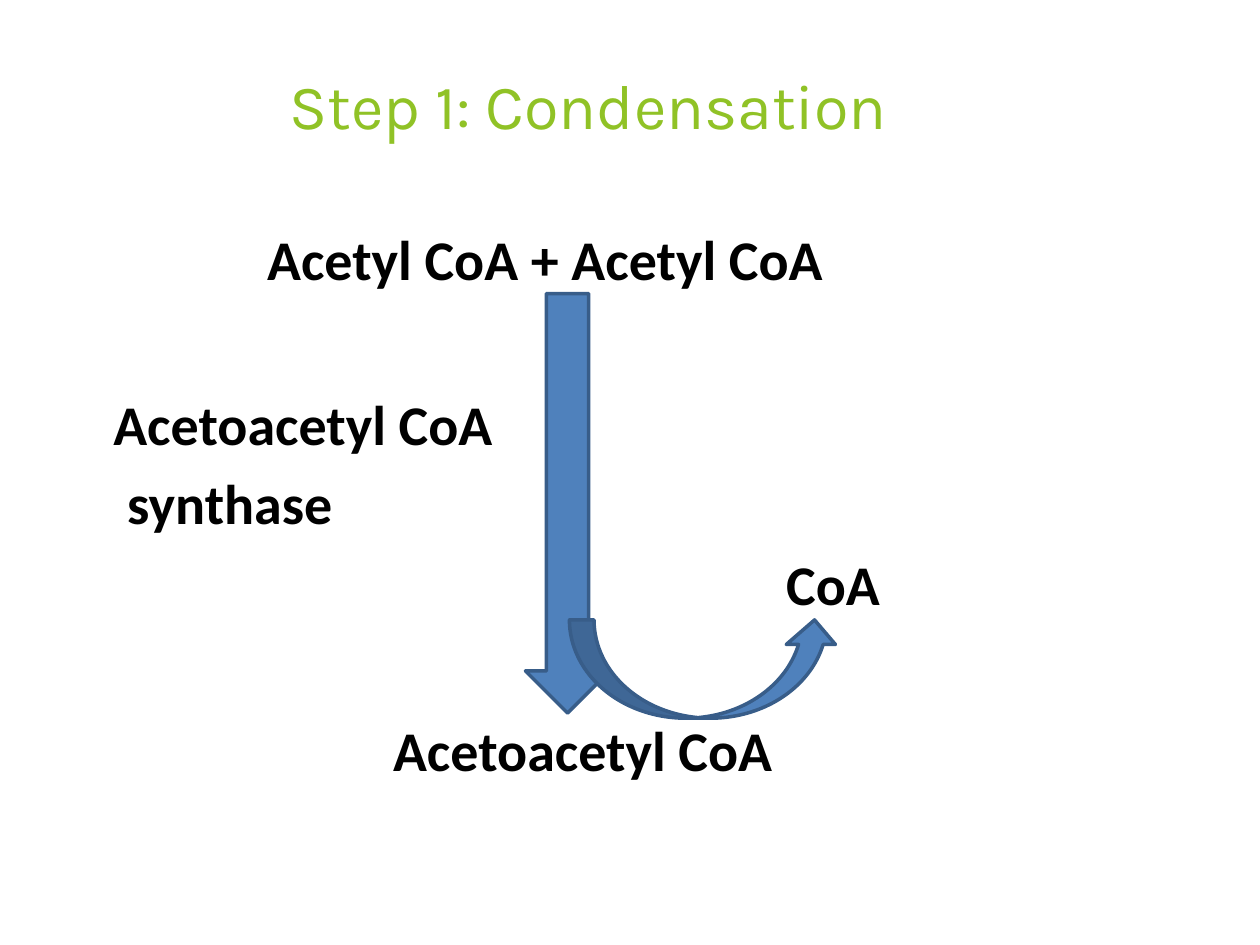
from dataclasses import dataclass

import pptx
import pptx.dml.color
import pptx.enum.shapes
import pptx.enum.text
import pptx.util

Inches = pptx.util.Inches
Pt = pptx.util.Pt
Shape = pptx.enum.shapes.MSO_SHAPE


def color(code):
    return pptx.dml.color.RGBColor.from_string(code)


@dataclass(frozen=True)
class Theme:
    head: str = "90C226"
    ink: str = "000000"
    fill: str = "4F81BC"
    edge: str = "385D89"
    head_font: str = "Karla"
    body_font: str = "Calibri"
    head_size: int = 36
    body_size: int = 32
    line: int = 2


THEME = Theme()


def text(frame, lines, *, font=THEME.body_font, size=THEME.body_size,
         ink=THEME.ink, bold=True, gap=0, indent=0):
    """Fill the frame; gap and indent apply to each line after the first."""
    frame.word_wrap = True
    frame.auto_size = pptx.enum.text.MSO_AUTO_SIZE.NONE
    frame.vertical_anchor = pptx.enum.text.MSO_ANCHOR.TOP
    frame.margin_left = frame.margin_right = 0
    frame.margin_top = frame.margin_bottom = 0
    for i, line in enumerate(lines):
        para = frame.add_paragraph() if i else frame.paragraphs[0]
        para.alignment = pptx.enum.text.PP_ALIGN.LEFT
        para.space_before = Pt(gap if i else 0)
        if i and indent:
            para._p.get_or_add_pPr().set("marL", str(Inches(indent)))
        run = para.add_run()
        run.text = line
        run.font.name = font
        run.font.size = Pt(size)
        run.font.bold = bold
        run.font.color.rgb = color(ink)


def place(box):
    return [Inches(n) for n in box]


def title(slide, box, words):
    shape = slide.shapes.title
    shape.left, shape.top, shape.width, shape.height = place(box)
    text(shape.text_frame, [words], font=THEME.head_font,
         size=THEME.head_size, ink=THEME.head, bold=False)


def label(slide, box, *lines, **form):
    text(slide.shapes.add_textbox(*place(box)).text_frame, lines, **form)


def arrow(slide, kind, box):
    shape = slide.shapes.add_shape(kind, *place(box))
    shape.shadow.inherit = False
    shape.fill.solid()
    shape.fill.fore_color.rgb = color(THEME.fill)
    shape.line.color.rgb = color(THEME.edge)
    shape.line.width = Pt(THEME.line)


def step(slide, box):
    """Draw the reaction: substrates, enzyme, released CoA and product."""
    x, y, width, height = box
    row = 0.55
    label(slide, (x + 1.22, y, width - 1.22, row), "Acetyl CoA + Acetyl CoA")
    label(slide, (x, y + 1.31, 3.2, 1.2), "Acetoacetyl CoA", "synthase",
          gap=7, indent=0.11)
    label(slide, (x + 5.34, y + 2.58, 1, row), "CoA")
    label(slide, (x + 2.22, y + height - row, 3.3, row), "Acetoacetyl CoA")
    arrow(slide, Shape.DOWN_ARROW, (x + 3.27, y + 0.55, 0.67, 3.33))
    arrow(slide, Shape.CURVED_UP_ARROW, (x + 3.62, y + 3.14, 2.14, 0.78))


def main():
    deck = pptx.Presentation()
    deck.slide_width, deck.slide_height = Inches(10), Inches(7.5)
    slide = deck.slides.add_slide(deck.slide_layouts[5])
    title(slide, (2.3, 0.53, 5.4, 0.6), "Step 1: Condensation")
    step(slide, (0.9, 1.78, 6.34, 4.45))
    deck.save("out.pptx")


if __name__ == "__main__":
    main()
